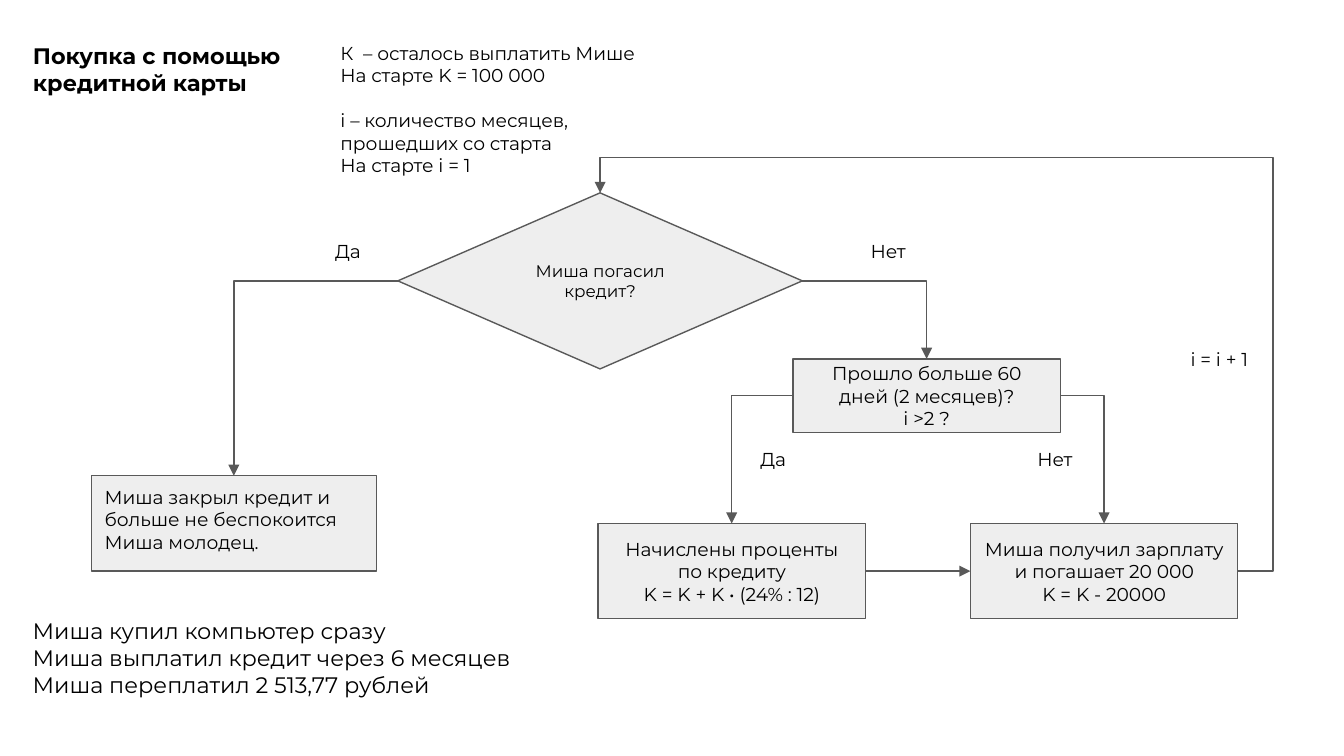
from dataclasses import dataclass

from lxml import etree
from pptx import Presentation
from pptx.dml.color import RGBColor
from pptx.enum.shapes import MSO_CONNECTOR, MSO_SHAPE
from pptx.enum.text import MSO_ANCHOR, MSO_AUTO_SIZE, PP_ALIGN
from pptx.oxml.ns import qn
from pptx.util import Pt

ELBOW = MSO_CONNECTOR.ELBOW
RECT, DIAMOND = MSO_SHAPE.RECTANGLE, MSO_SHAPE.DIAMOND
TOP, MIDDLE = MSO_ANCHOR.TOP, MSO_ANCHOR.MIDDLE
LEFT, CENTER = PP_ALIGN.LEFT, PP_ALIGN.CENTER
NO_FIT = MSO_AUTO_SIZE.NONE

# Connection sites shared by rectangles and diamonds
NORTH, WEST, SOUTH, EAST = range(4)

SCALE = 4572  # EMU in one px, 200 px to the inch
TITLE_ONLY = 5


@dataclass(frozen=True)
class Theme:
    font: str = "Montserrat"
    ink: RGBColor = RGBColor(0, 0, 0)
    fill: RGBColor = RGBColor(0xEE, 0xEE, 0xEE)
    edge: RGBColor = RGBColor(0x59, 0x59, 0x59)
    stroke: float = 0.75
    large: int = 12
    body: int = 10
    small: int = 9
    inset: int = 20


THEME = Theme()


def px(*vals):
    return [val * SCALE for val in vals]


def write(shape, lines, size=THEME.body, align=LEFT, anchor=TOP, bold=False):
    """Fill a shape with one paragraph for each line."""
    frame = shape.text_frame
    frame.word_wrap = True
    frame.auto_size = NO_FIT
    frame.vertical_anchor = anchor
    frame.margin_left = frame.margin_right = THEME.inset * SCALE
    frame.margin_top = frame.margin_bottom = THEME.inset * SCALE
    for num, line in enumerate(lines):
        para = frame.add_paragraph() if num else frame.paragraphs[0]
        para.text = line
        para.alignment = align
        para.font.name = THEME.font
        para.font.size = Pt(size)
        para.font.bold = bold
        para.font.color.rgb = THEME.ink
    return frame


def add_title(slide, box, lines):
    title = slide.shapes.title
    title.left, title.top, title.width, title.height = px(*box)
    write(title, lines, THEME.large, bold=True)


def add_text(slide, box, lines, size=THEME.body):
    return write(slide.shapes.add_textbox(*px(*box)), lines, size)


def add_node(slide, kind, box, lines, size=THEME.body, align=CENTER, anchor=MIDDLE):
    node = slide.shapes.add_shape(kind, *px(*box))
    node.shadow.inherit = False
    node.fill.solid()
    node.fill.fore_color.rgb = THEME.fill
    node.line.color.rgb = THEME.edge
    node.line.width = Pt(THEME.stroke)
    write(node, lines, size, align, anchor)
    return node


def add_arrow(slide, start, out, end, into, preset="bentConnector2", bends=()):
    """Join two nodes; bends are shares of the arrow's width and height."""
    arrow = slide.shapes.add_connector(ELBOW, 0, 0, 0, 0)
    arrow.begin_connect(start, out)
    arrow.end_connect(end, into)
    arrow.line.color.rgb = THEME.edge
    arrow.line.width = Pt(THEME.stroke)

    props = arrow._element.spPr
    etree.SubElement(props.find(qn("a:ln")), qn("a:tailEnd"), type="triangle")
    etree.SubElement(props, qn("a:effectLst"))

    # Route of the elbow
    shape = props.find(qn("a:prstGeom"))
    shape.set("prst", preset)
    guides = shape.find(qn("a:avLst"))
    if guides is None:
        guides = etree.SubElement(shape, qn("a:avLst"))
    for num, bend in enumerate(bends, 1):
        etree.SubElement(guides, qn("a:gd"), name=f"adj{num}",
                         fmla=f"val {round(bend * 100000)}")

    # A flip both ways is written as a half turn
    place = props.find(qn("a:xfrm"))
    if place.get("flipH") == place.get("flipV") == "1":
        del place.attrib["flipH"], place.attrib["flipV"]
        place.set("rot", "10800000")


def main():
    deck = Presentation()
    deck.slide_width, deck.slide_height = px(2000, 1125)
    slide = deck.slides.add_slide(deck.slide_layouts[TITLE_ONLY])

    # Title, variables and outcome
    add_title(slide, (29, 43, 424, 88), ["Покупка с помощью", "кредитной карты"])
    notes = add_text(slide, (487, 42, 594, 282), [
        "К  – осталось выплатить Мише",
        "На старте K = 100 000",
        "i – количество месяцев,",
        "прошедших со старта",
        "На старте i = 1",
    ])
    notes.paragraphs[2].space_before = Pt(12.2)
    add_text(slide, (29, 898, 820, 142), [
        "Миша купил компьютер сразу",
        "Миша выплатил кредит через 6 месяцев",
        "Миша переплатил 2 513,77 рублей",
    ], THEME.large)

    # Steps
    paid = add_node(slide, DIAMOND, (592, 287, 602, 262),
                    ["Миша погасил кредит?"], THEME.small)
    done = add_node(slide, RECT, (136, 708, 424, 142),
                    ["Миша закрыл кредит и больше не беспокоится\nМиша молодец."],
                    align=LEFT, anchor=TOP)
    done.text_frame.margin_top = 15 * SCALE
    late = add_node(slide, RECT, (1180, 534, 398, 110),
                    ["Прошло больше 60 дней (2 месяцев)?", "i >2 ?"])
    charge = add_node(slide, RECT, (890, 779, 398, 142),
                      ["Начислены проценты по кредиту", "K = K + K • (24% : 12)"])
    repay = add_node(slide, RECT, (1444, 779, 398, 142),
                     ["Миша получил зарплату и погашает 20 000", "K = K - 20000"])

    # Arrows
    for start, out, end in ((paid, WEST, done), (paid, EAST, late),
                            (late, WEST, charge), (late, EAST, repay)):
        add_arrow(slide, start, out, end, NORTH)
    add_arrow(slide, charge, EAST, repay, WEST, "bentConnector3", (0.5,))
    add_arrow(slide, repay, EAST, paid, NORTH, "bentConnector4", (-0.055, 1.093))

    # Arrow labels
    for left, top, wide, high, word in (
            (479, 337, 90, 62, "Да"), (1276, 337, 106, 62, "Нет"),
            (1112, 646, 90, 62, "Да"), (1524, 646, 106, 62, "Нет"),
            (1752, 498, 158, 120, "i = i + 1")):
        add_text(slide, (left, top, wide, high), [word])

    deck.save("out.pptx")


if __name__ == "__main__":
    main()
